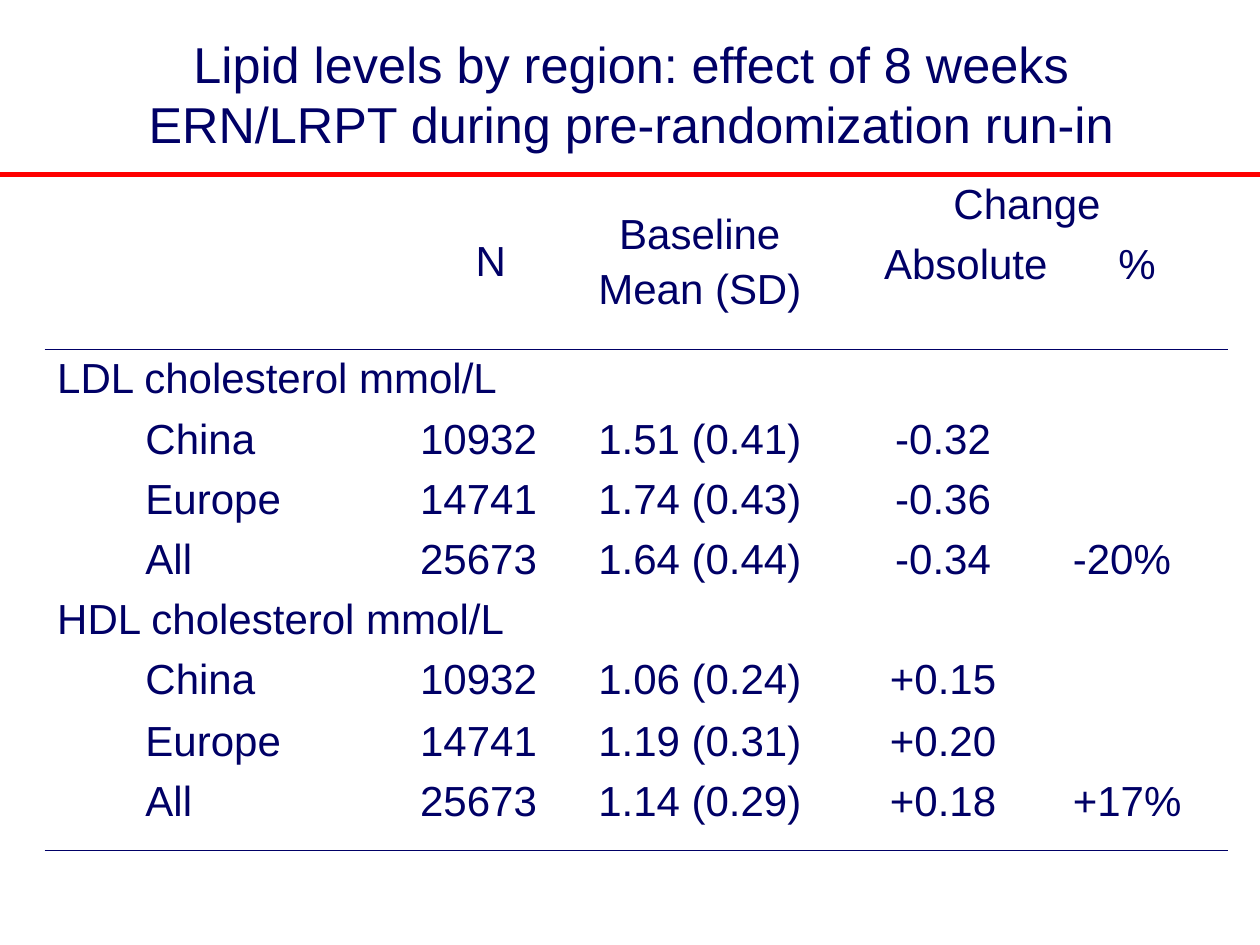
from lxml import etree
from pptx import Presentation
from pptx.dml.color import RGBColor
from pptx.enum.shapes import MSO_CONNECTOR
from pptx.enum.text import MSO_ANCHOR, PP_ALIGN
from pptx.oxml.ns import qn
from pptx.util import Pt

LEFT, CENTER = PP_ALIGN.LEFT, PP_ALIGN.CENTER
TOP, MIDDLE = MSO_ANCHOR.TOP, MSO_ANCHOR.MIDDLE
STRAIGHT = MSO_CONNECTOR.STRAIGHT
NAVY, RED = "000066", "FF0000"
FONT = "Arial"
PLAIN_TABLE = "{2D5ABB26-0587-4C30-8999-92F81FD0307C}"

COLUMN_WIDTHS = [50.4, 157, 95, 144, 134, 26, 70]
ROW_HEIGHTS = [34.4] * 7 + [35.3, 34.4, 44.6]
REGION_ALIGNMENTS = [LEFT, LEFT, CENTER, CENTER, LEFT]
LIPIDS = [
    ("LDL cholesterol mmol/L", 4, [
        ("China", "10932", "1.51 (0.41)", "-0.32", ""),
        ("Europe", "14741", "1.74 (0.43)", "-0.36", ""),
        ("All", "25673", "1.64 (0.44)", "-0.34", "-20%"),
    ]),
    ("HDL cholesterol mmol/L", 7, [
        ("China", "10932", "1.06 (0.24)", "+0.15", ""),
        ("Europe", "14741", "1.19 (0.31)", "+0.20", ""),
        ("All", "25673", "1.14 (0.29)", "+0.18", "+17%"),
    ]),
]


def color(value):
    return RGBColor.from_string(value)


def write(frame, text, size, align):
    """Fill a text frame, one paragraph for each line of text."""
    for index, line in enumerate(text.split("\n")):
        paragraph = frame.add_paragraph() if index else frame.paragraphs[0]
        paragraph.text = line
        paragraph.alignment = align
        if index:
            paragraph.space_before = Pt(4.4)
        paragraph.font.name = FONT
        paragraph.font.size = Pt(size)
        paragraph.font.color.rgb = color(NAVY)


def add_title(slide, left, top, width, height):
    title = slide.shapes.add_textbox(Pt(left), Pt(top), Pt(width), Pt(height))
    title.text_frame.word_wrap = True
    title.text_frame.vertical_anchor = MIDDLE
    write(title.text_frame, "Lipid levels by region: effect of 8 weeks "
          "ERN/LRPT during pre-randomization run-in", 28.8, CENTER)


def add_divider(slide, left, top, width):
    divider = slide.shapes.add_connector(
        STRAIGHT, Pt(left), Pt(top), Pt(left + width), Pt(top))
    divider.line.color.rgb = color(RED)
    divider.line.width = Pt(3)
    etree.SubElement(divider._element.spPr, qn("a:effectLst"))


def add_bottom_border(cell):
    border = etree.Element(qn("a:lnB"), w=str(Pt(1)))
    fill = etree.SubElement(border, qn("a:solidFill"))
    etree.SubElement(fill, qn("a:srgbClr"), val=NAVY)
    cell._tc.get_or_add_tcPr().insert(0, border)


def put(table, row, column, text, align=LEFT, anchor=TOP, rows=1, columns=1):
    """Write a cell that spans the given number of rows and columns."""
    cell = table.cell(row, column)
    if rows > 1 or columns > 1:
        cell.merge(table.cell(row + rows - 1, column + columns - 1))
    cell.vertical_anchor = anchor
    if anchor == MIDDLE:
        cell.margin_top = cell.margin_bottom
    if text:
        write(cell.text_frame, text, 24, align)


def fill_header(table):
    put(table, 0, 0, "", columns=2)
    put(table, 0, 2, "N", CENTER, MIDDLE, rows=2)
    put(table, 0, 3, "Baseline\nMean (SD)", CENTER, MIDDLE, rows=2)
    put(table, 0, 4, "Change", CENTER, columns=3)
    put(table, 1, 4, "Absolute", CENTER, columns=2)
    put(table, 1, 6, "%")


def fill_lipids(table, row):
    for lipid, span, regions in LIPIDS:
        put(table, row, 0, lipid, columns=span)
        if span == 4:
            put(table, row, 4, "", columns=2)
        for row, values in enumerate(regions, row + 1):
            for column, value in enumerate(values, 1):
                put(table, row, column, value, REGION_ALIGNMENTS[column - 1],
                    columns=2 if column == 5 else 1)
        row += 1


def add_lipid_table(slide, left, top):
    frame = slide.shapes.add_table(
        len(ROW_HEIGHTS), len(COLUMN_WIDTHS), Pt(left), Pt(top),
        Pt(sum(COLUMN_WIDTHS)), Pt(sum(ROW_HEIGHTS)))
    table = frame.table
    table.first_row = table.horz_banding = False
    table._tbl.tblPr.find(qn("a:tableStyleId")).text = PLAIN_TABLE
    for column, width in zip(table.columns, COLUMN_WIDTHS):
        column.width = Pt(width)
    for row, height in zip(table.rows, ROW_HEIGHTS):
        row.height = Pt(height)
    for cell in table.iter_cells():
        cell.fill.background()
        cell.margin_bottom = Pt(1.7)

    fill_header(table)
    fill_lipids(table, 2)

    for column in range(len(COLUMN_WIDTHS)):
        add_bottom_border(table.cell(1, column))
        add_bottom_border(table.cell(len(ROW_HEIGHTS) - 1, column))
    for column in (2, 3):
        add_bottom_border(table.cell(0, column))


def main():
    presentation = Presentation()
    presentation.slide_width, presentation.slide_height = Pt(720), Pt(540)
    slide = presentation.slides.add_slide(presentation.slide_layouts[6])
    add_title(slide, 36.8, 15, 648, 77)
    add_lipid_table(slide, 25.5, 100)
    add_divider(slide, 0, 99.8, 720)
    presentation.save("out.pptx")


if __name__ == "__main__":
    main()
